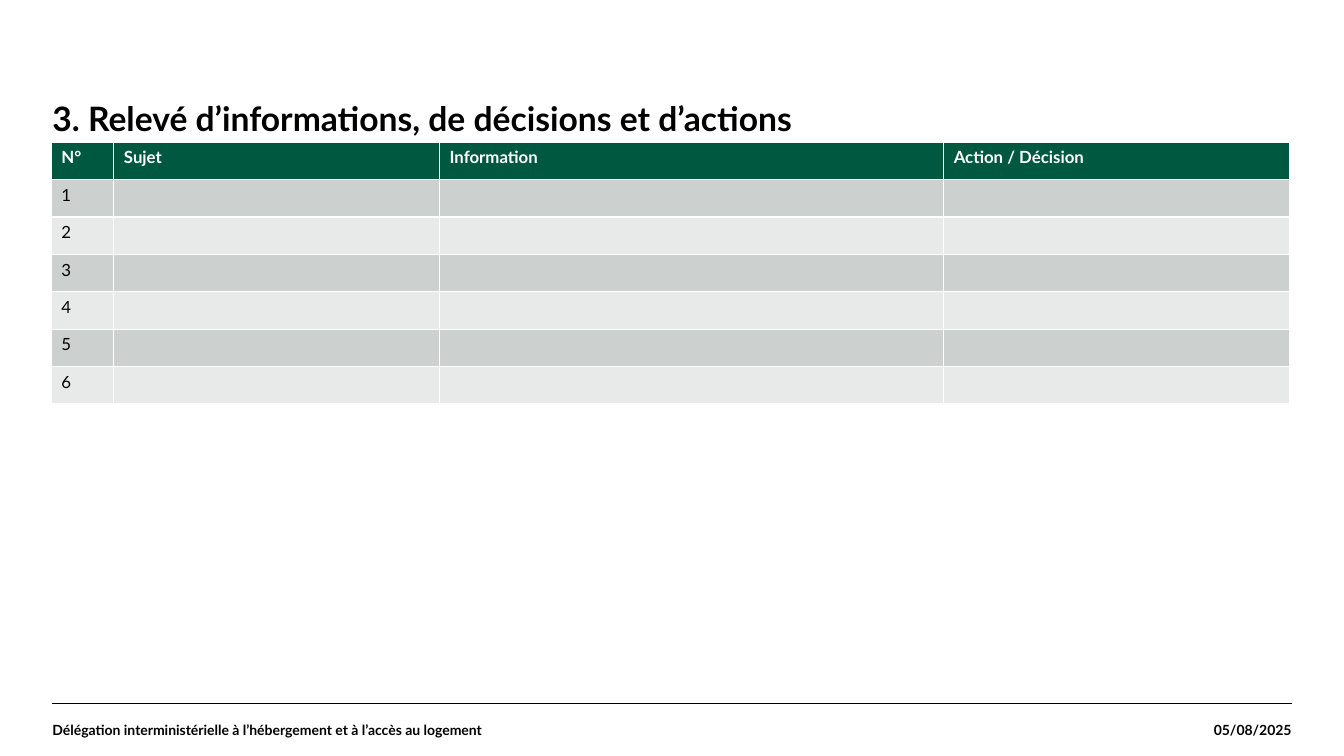
from lxml.etree import SubElement
from pptx import Presentation
from pptx.dml.color import RGBColor
from pptx.enum.shapes import MSO_CONNECTOR
from pptx.enum.text import MSO_ANCHOR, MSO_AUTO_SIZE, PP_ALIGN
from pptx.oxml.ns import qn
from pptx.util import Inches, Pt

FONT = "Lato"
COLORS = {"text": "000000", "header": "005841", "header_text": "FFFFFF",
          "odd_row": "CCD1CF", "even_row": "E7EAE9"}
HEADINGS = ["N°", "Sujet", "Information", "Action / Décision"]
COLUMN_WIDTHS = [0.62, 3.23, 5, 3.43]
ITEM_COUNT = 6


def color(name):
    return RGBColor.from_string(COLORS[name])


def format_runs(paragraph, size, color_name="text", bold=True):
    for run in paragraph.runs:
        run.font.name = FONT
        run.font.size = Pt(size)
        run.font.bold = bold
        run.font.color.rgb = color(color_name)


def fill_text(shape, text, size, anchor, align=PP_ALIGN.LEFT):
    frame = shape.text_frame
    frame.text = text
    frame.word_wrap = True
    frame.auto_size = MSO_AUTO_SIZE.NONE
    frame.vertical_anchor = anchor
    frame.margin_left = frame.margin_right = 0
    frame.margin_top = frame.margin_bottom = 0
    paragraph = frame.paragraphs[0]
    paragraph.alignment = align
    format_runs(paragraph, size)
    return paragraph


def add_title(slide, left, top, width, height):
    title = slide.shapes.title
    title.left, title.top = Inches(left), Inches(top)
    title.width, title.height = Inches(width), Inches(height)
    heading = fill_text(title, "3. Relevé d’informations, de décisions et d’actions",
                        24, MSO_ANCHOR.TOP)
    heading.line_spacing = 0.9


def add_footer(slide, left, top, width, height):
    # Rule above the footer
    rule = slide.shapes.add_connector(MSO_CONNECTOR.STRAIGHT, Inches(left), Inches(top),
                                      Inches(left + width), Inches(top))
    rule.line.color.rgb = color("text")
    rule.line.width = Pt(0.8)
    SubElement(rule._element.spPr, qn("a:effectLst"))

    # Department on the left, date on the right
    department_width, date_width = 8.61, 1.71
    department = slide.shapes.add_textbox(Inches(left), Inches(top),
                                          Inches(department_width), Inches(height))
    fill_text(department,
              "Délégation interministérielle à l’hébergement et à l’accès au logement",
              10, MSO_ANCHOR.MIDDLE)
    date = slide.shapes.add_textbox(Inches(left + width - date_width), Inches(top),
                                    Inches(date_width), Inches(height))
    fill_text(date, "05/08/2025", 10, MSO_ANCHOR.MIDDLE, PP_ALIGN.RIGHT)


def add_decision_log(slide, left, top, width, height):
    rows = [HEADINGS] + [[str(number), "", "", ""] for number in range(1, ITEM_COUNT + 1)]
    log = slide.shapes.add_table(len(rows), len(HEADINGS), Inches(left), Inches(top),
                                 Inches(width), Inches(height)).table
    for column, column_width in zip(log.columns, COLUMN_WIDTHS):
        column.width = Inches(column_width)

    for row_index, texts in enumerate(rows):
        is_header = row_index == 0
        band = "header" if is_header else "odd_row" if row_index % 2 else "even_row"
        for column_index, text in enumerate(texts):
            cell = log.cell(row_index, column_index)
            cell.fill.solid()
            cell.fill.fore_color.rgb = color(band)
            cell.text = text
            paragraph = cell.text_frame.paragraphs[0]
            format_runs(paragraph, 12, "header_text" if is_header else "text", is_header)
            if not text:
                # Keeps empty cells from stretching their row
                SubElement(paragraph._p, qn("a:endParaRPr"), sz="1200")


def main():
    presentation = Presentation()
    presentation.slide_width = Inches(13.33)
    presentation.slide_height = Inches(7.5)
    slide = presentation.slides.add_slide(presentation.slide_layouts[5])
    add_footer(slide, 0.52, 6.98, 12.29, 0.52)
    add_title(slide, 0.52, 1.02, 12.28, 1.05)
    add_decision_log(slide, 0.51, 1.41, sum(COLUMN_WIDTHS), 2.6)
    presentation.save("out.pptx")


if __name__ == "__main__":
    main()
